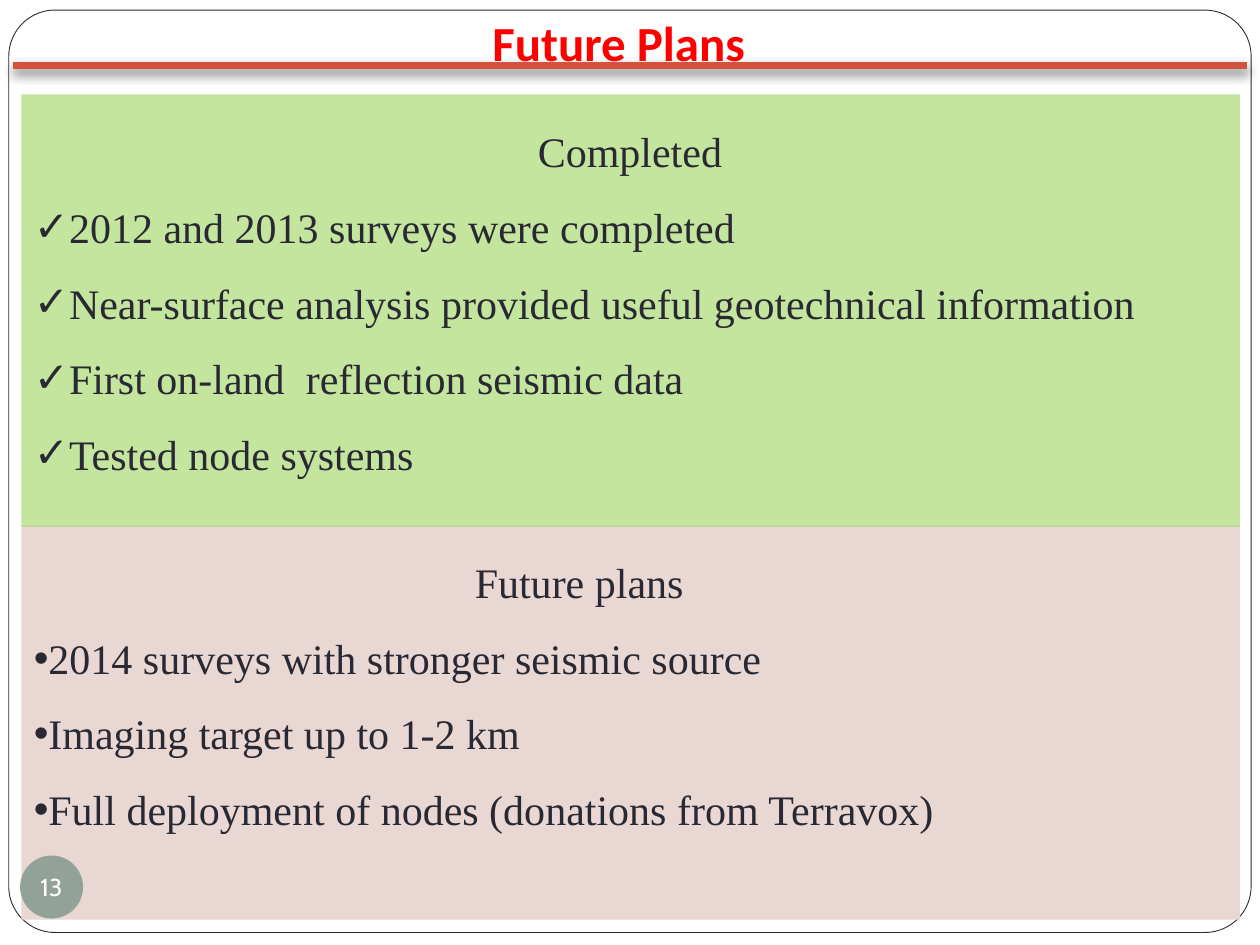
from dataclasses import dataclass

from lxml.etree import SubElement
from pptx import Presentation
from pptx.dml.color import RGBColor as Rgb
from pptx.enum.shapes import MSO_CONNECTOR as Connector, MSO_SHAPE as Preset
from pptx.enum.text import MSO_ANCHOR as Anchor, PP_ALIGN as Align
from pptx.oxml.ns import qn
from pptx.util import Inches, Pt

WIDTH, HEIGHT = Inches(10), Inches(7.5)


@dataclass(frozen=True)
class Theme:
    """Colours, fonts and type sizes of the slide."""
    paper: str = "FFFFFF"
    ink: str = "292934"
    heading: str = "FF0000"
    rule: str = "D2533C"
    badge: str = "93A299"
    done: str = "92D050"
    planned: str = "E9D7D3"
    shadow: str = "000000"
    heading_font: str = "Calibri"
    body_font: str = "Times New Roman"
    number_font: str = "Cabin"
    heading_size: int = 28
    body_size: int = 24
    number_size: int = 14


THEME = Theme()


def across(percent):
    """Turn a percentage of the slide width into a length."""
    return round(WIDTH * percent / 100)


def down(percent):
    """Turn a percentage of the slide height into a length."""
    return round(HEIGHT * percent / 100)


def place(box):
    """Turn a box of slide percentages into left, top, width and height."""
    left, top, width, height = box
    return across(left), down(top), across(width), down(height)


def style(paragraph, font, size, color, bold=False):
    """Format every run of a paragraph."""
    for run in paragraph.runs:
        run.font.name = font
        run.font.size = Pt(size)
        run.font.color.rgb = Rgb.from_string(color)
        run.font.bold = bold


def add_filled(slide, preset, box, color, opacity=100):
    """Add a flat shape without an outline."""
    shape = slide.shapes.add_shape(preset, *place(box))
    shape.shadow.inherit = False
    shape.fill.solid()
    shape.fill.fore_color.rgb = Rgb.from_string(color)
    shape.line.fill.background()
    if opacity < 100:
        tint = shape.fill._xPr.find(qn("a:solidFill"))[0]
        SubElement(tint, qn("a:alpha"), val=str(opacity * 1000))
    return shape


def add_frame(slide, box):
    """Add the rounded border around the slide."""
    frame = add_filled(slide, Preset.ROUNDED_RECTANGLE, box, THEME.paper)
    frame.adjustments[0] = 0.05
    frame.line.color.rgb = Rgb.from_string(THEME.ink)
    frame.line.width = Pt(0.5)


def add_panel(slide, box, color, opacity, heading, indent, bullet, points):
    """Add a coloured panel with an indented heading and a bulleted list."""
    panel = add_filled(slide, Preset.RECTANGLE, box, color, opacity)
    frame = panel.text_frame
    frame.word_wrap = True
    frame.vertical_anchor = Anchor.TOP
    frame.text = "\n".join([heading, *points])
    for index, paragraph in enumerate(frame.paragraphs):
        properties = paragraph._p.get_or_add_pPr()
        properties.set("marL", str(0 if index else across(indent)))
        properties.set("indent", "0")
        if index:
            SubElement(properties, qn("a:buFont"), typeface="Arial")
            SubElement(properties, qn("a:buChar"), char=bullet)
        paragraph.alignment = Align.LEFT
        paragraph.line_spacing = 1.5
        style(paragraph, THEME.body_font, THEME.body_size, THEME.ink)


def add_badge(slide, box, number):
    """Add the round slide number."""
    badge = add_filled(slide, Preset.OVAL, box, THEME.badge)
    frame = badge.text_frame
    frame.margin_left = frame.margin_right = 0
    frame.margin_top = frame.margin_bottom = 0
    frame.word_wrap = False
    frame.vertical_anchor = Anchor.MIDDLE
    frame.text = number
    frame.paragraphs[0].alignment = Align.CENTER
    style(frame.paragraphs[0], THEME.number_font, THEME.number_size, THEME.paper)


def add_rule(slide, box):
    """Add the shadowed rule below the title."""
    left, top, width, height = place(box)
    rule = slide.shapes.add_connector(
        Connector.STRAIGHT, left, top, left + width, top + height)
    rule.line.color.rgb = Rgb.from_string(THEME.rule)
    rule.line.width = Pt(3.75)
    effects = SubElement(rule._element.spPr, qn("a:effectLst"))
    shadow = SubElement(effects, qn("a:outerShdw"), blurRad=str(Pt(6)),
                        dist=str(Pt(3)), dir="5400000", rotWithShape="0")
    tint = SubElement(shadow, qn("a:srgbClr"), val=THEME.shadow)
    SubElement(tint, qn("a:alpha"), val="60000")


def add_title(slide, box, title):
    """Add the centred slide title."""
    frame = slide.shapes.add_textbox(*place(box)).text_frame
    frame.word_wrap = True
    frame.text = title
    frame.paragraphs[0].alignment = Align.CENTER
    style(frame.paragraphs[0], THEME.heading_font, THEME.heading_size,
          THEME.heading, bold=True)


def main():
    """Build and save the slide."""
    deck = Presentation()
    deck.slide_width, deck.slide_height = WIDTH, HEIGHT
    slide = deck.slides.add_slide(deck.slide_layouts[6])
    add_frame(slide, (0.7, 1.07, 98.6, 97.6))
    add_panel(slide, (1.7, 55.6, 96.7, 41.73), THEME.planned, 100,
              "Future plans", 35, "•", [
                  "2014 surveys with stronger seismic source",
                  "Imaging target up to 1-2 km",
                  "Full deployment of nodes (donations from Terravox)"])
    add_badge(slide, (1.6, 90.53, 5, 6.67), "13")
    add_rule(slide, (1, 6.93, 98, 0))
    add_title(slide, (4.1, 0.67, 90, 16.67), "Future Plans")
    add_panel(slide, (1.7, 10, 96.7, 45.73), THEME.done, 55,
              "Completed", 40, "✓", [
                  "2012 and 2013 surveys were completed",
                  "Near-surface analysis provided useful geotechnical information",
                  "First on-land  reflection seismic data",
                  "Tested node systems"])
    deck.save("out.pptx")


if __name__ == "__main__":
    main()
